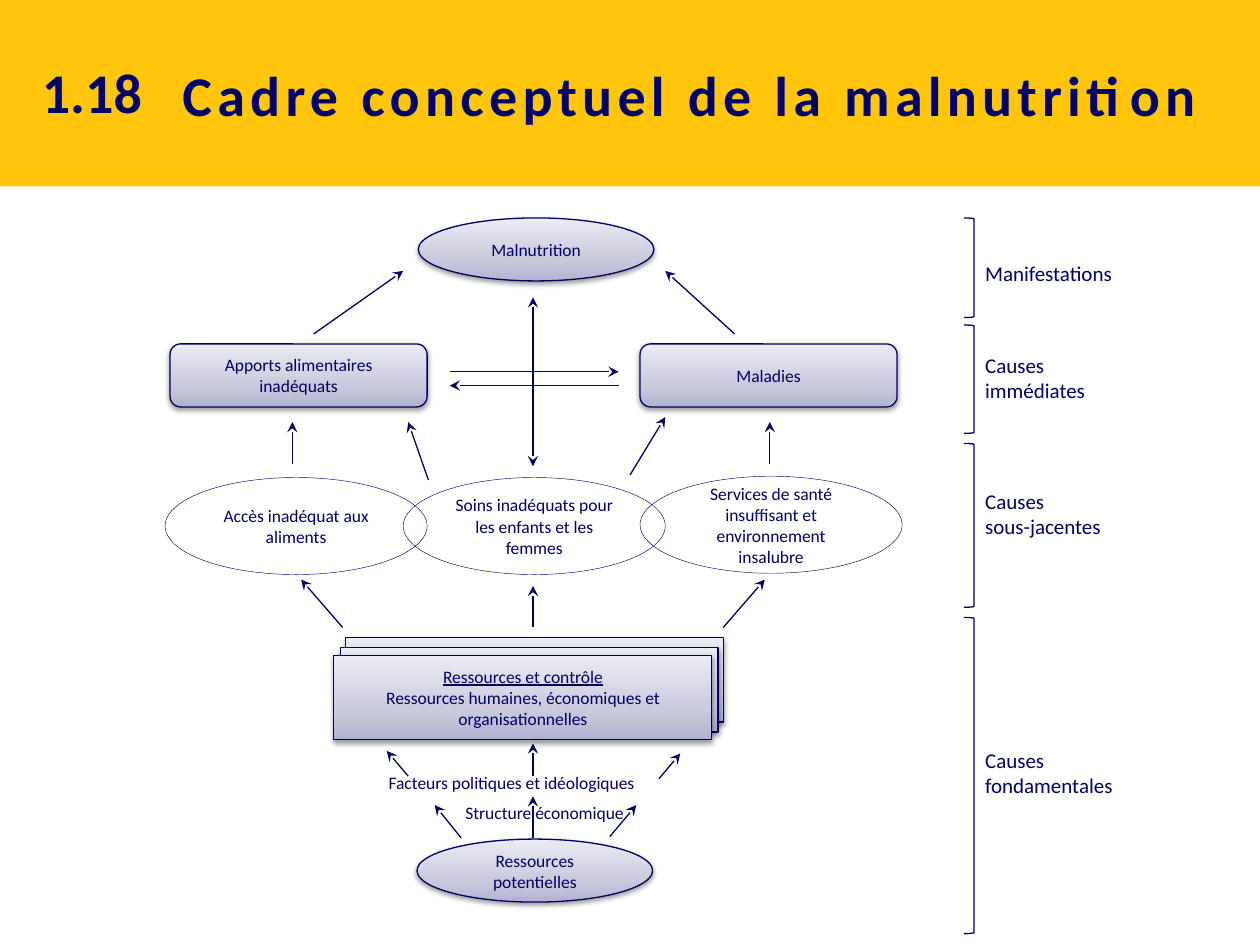
from pptx import Presentation
from pptx.dml.color import RGBColor
from pptx.enum.shapes import MSO_CONNECTOR as Connector, MSO_SHAPE as Shape
from pptx.enum.text import MSO_ANCHOR as Anchor, PP_ALIGN as Align
from pptx.oxml import parse_xml
from pptx.oxml.ns import nsdecls, qn
from pptx.util import Inches, Pt

NAVY, LINE, YELLOW = "000066", "000064", "FFC60B"
GRADIENT = [(0, "B3B3D0"), (35, "CACADD"), (100, "EBEBF3")]


def color(hex_code):
    return RGBColor.from_string(hex_code)


def place(box, x, y, w, h):
    """Inches of a part that lies at x, y inside the box."""
    return [Inches(v) for v in (box[0] + x, box[1] + y, w, h)]


def write(frame, lines, size, align=Align.CENTER, anchor=Anchor.MIDDLE, bold=False):
    frame.word_wrap = True
    frame.vertical_anchor = anchor
    for i, line in enumerate(lines):
        paragraph = frame.paragraphs[0] if i == 0 else frame.add_paragraph()
        paragraph.text = line
        paragraph.alignment = align
        font = paragraph.font
        font.name, font.size, font.bold = "Calibri", Pt(size), bold
        font.color.rgb = color(NAVY)


def add_label(slide, box, at, lines, size, align=Align.LEFT, bold=False):
    frame = slide.shapes.add_textbox(*place(box, *at)).text_frame
    write(frame, lines, size, align, Anchor.TOP, bold)
    return frame


def add_outline(slide, box, kind, at, line=LINE, width=0.75):
    shape = slide.shapes.add_shape(kind, *place(box, *at))
    shape.shadow.inherit = False
    shape.fill.background()
    shape.line.color.rgb = color(line)
    shape.line.width = Pt(width)
    return shape


def add_shaded(slide, box, kind, at):
    """Outlined shape with a vertical gradient and a soft shadow below."""
    shape = add_outline(slide, box, kind, at)
    properties = shape.element.spPr
    stops = "".join(f'<a:gs pos="{pos * 1000}"><a:srgbClr val="{tone}"/></a:gs>'
                    for pos, tone in GRADIENT)
    properties.replace(properties.find(qn("a:noFill")), parse_xml(
        f'<a:gradFill {nsdecls("a")} rotWithShape="1"><a:gsLst>{stops}</a:gsLst>'
        '<a:lin ang="16200000" scaled="0"/></a:gradFill>'))
    properties.find(qn("a:effectLst")).append(parse_xml(
        f'<a:outerShdw {nsdecls("a")} blurRad="{Pt(3.1)}" dist="{Pt(1.6)}" '
        'dir="5400000" rotWithShape="0"><a:srgbClr val="000000">'
        '<a:alpha val="38000"/></a:srgbClr></a:outerShdw>'))
    return shape


def add_arrow(slide, box, x1, y1, x2, y2, ends=("tailEnd",)):
    start, end = place(box, x1, y1, 0, 0)[:2], place(box, x2, y2, 0, 0)[:2]
    arrow = slide.shapes.add_connector(Connector.STRAIGHT, *start, *end)
    arrow.line.color.rgb = color(LINE)
    arrow.line.width = Pt(0.75)
    for name in ends:
        arrow.line._get_or_add_ln().append(
            parse_xml(f'<a:{name} {nsdecls("a")} type="stealth"/>'))
    arrow._element.spPr.append(parse_xml(f'<a:effectLst {nsdecls("a")}/>'))


def add_header(slide, box):
    band = slide.shapes.add_shape(Shape.RECTANGLE, *place(box, 0, 0, *box[2:]))
    band.shadow.inherit = False
    band.fill.solid()
    band.fill.fore_color.rgb = color(YELLOW)
    band.line.fill.background()
    title = add_label(slide, box, (1.35, 0.43, 8.66, 0.6),
                      ["Cadre conceptuel de la malnutrition"], 32, bold=True)
    title.paragraphs[0].runs[0].font._element.set("spc", "300")
    number = add_label(slide, box, (0.23, 0.41, 1, 0.64), ["1.18"], 32,
                       Align.CENTER, True)
    number.word_wrap = False


def add_diagram(slide, box):
    # Context factors, set off-centre by one inner margin
    factors = add_label(slide, box, (1.26, 4.38, 3.42, 0.27),
                        ["Facteurs politiques et idéologiques"], 10, Align.CENTER)
    factors.margin_right = Inches(0.52)
    structure = add_label(slide, box, (1.14, 4.62, 3.42, 0.27),
                          ["Structure économique"], 10, Align.CENTER)
    structure.margin_left = Inches(0.44)

    # Outcome, immediate causes and potential resources
    for kind, at, text in [
        (Shape.OVAL, (2.02, 0.03, 1.87, 0.5), "Malnutrition"),
        (Shape.ROUNDED_RECTANGLE, (0.05, 1.03, 2.04, 0.5),
         "Apports alimentaires inadéquats"),
        (Shape.ROUNDED_RECTANGLE, (3.78, 1.03, 2.04, 0.5), "Maladies"),
        (Shape.OVAL, (2.01, 4.96, 1.87, 0.5), "Ressources potentielles"),
    ]:
        write(add_shaded(slide, box, kind, at).text_frame, [text], 10)

    # Underlying causes: overlapping ellipses
    for x, y, text in [
        (3.78, 2.08, "Services de santé insuffisant et environnement insalubre"),
        (1.9, 2.09, "Soins inadéquats pour les enfants et les femmes"),
        (0.01, 2.09, "Accès inadéquat aux aliments"),
    ]:
        cause = add_outline(slide, box, Shape.OVAL, (x, y, 2.08, 0.77), NAVY, 0.25)
        write(cause.text_frame, [text], 10)

    # Stacked resource cards, the front one with text
    for x, y in [(1.44, 3.36), (1.4, 3.44), (1.35, 3.5)]:
        card = add_shaded(slide, box, Shape.RECTANGLE, (x, y, 3, 0.67))
    write(card.text_frame, ["Ressources et contrôle",
          "Ressources humaines, économiques et organisationnelles"], 10)
    card.text_frame.paragraphs[0].font.underline = True

    # Arrows up the central axis
    axis = 2.93
    for bottom, top in [(3.28, 2.95), (4.95, 4.62), (4.46, 4.2)]:
        add_arrow(slide, box, axis, bottom, axis, top)
    add_arrow(slide, box, axis, 2, axis, 0.66, ("headEnd", "tailEnd"))

    # Arrows between levels and between the immediate causes
    for ends in [
        (1.19, 0.95, 1.9, 0.45), (4.53, 0.95, 3.98, 0.45),
        (2.27, 1.25, 3.61, 1.25), (3.61, 1.36, 2.27, 1.36),
        (1.02, 1.98, 1.02, 1.65), (4.81, 1.98, 4.81, 1.65),
        (2.1, 2.11, 1.94, 1.65), (3.7, 2.07, 3.98, 1.61),
        (1.42, 3.28, 1.09, 2.9), (4.44, 3.28, 4.77, 2.9),
        (1.94, 4.46, 1.77, 4.26), (3.93, 4.48, 4.1, 4.28),
        (2.36, 4.95, 2.15, 4.69), (3.54, 4.94, 3.75, 4.69),
    ]:
        add_arrow(slide, box, *ends)


def add_levels(slide, box):
    for top, height, label_top, width, lines in [
        (0, 0.79, 0.29, 1.25, ["Manifestations"]),
        (0.85, 0.86, 1.02, 1.25, ["Causes immédiates"]),
        (1.79, 1.3, 2.1, 1.25, ["Causes", "sous-jacentes"]),
        (3.17, 2.51, 4.15, 1.55, ["Causes fondamentales"]),
    ]:
        add_outline(slide, box, Shape.RIGHT_BRACKET, (0, top, 0.08, height))
        add_label(slide, box, (0.07, label_top, width, 0.5), lines, 12)


def main():
    deck = Presentation()
    deck.slide_width, deck.slide_height = Inches(10), Inches(7.5)
    slide = deck.slides.add_slide(deck.slide_layouts[6])
    add_header(slide, (0, 0, 10, 1.48))
    add_diagram(slide, (1.3, 1.7))
    add_levels(slide, (7.65, 1.73))
    deck.save("out.pptx")


if __name__ == "__main__":
    main()
